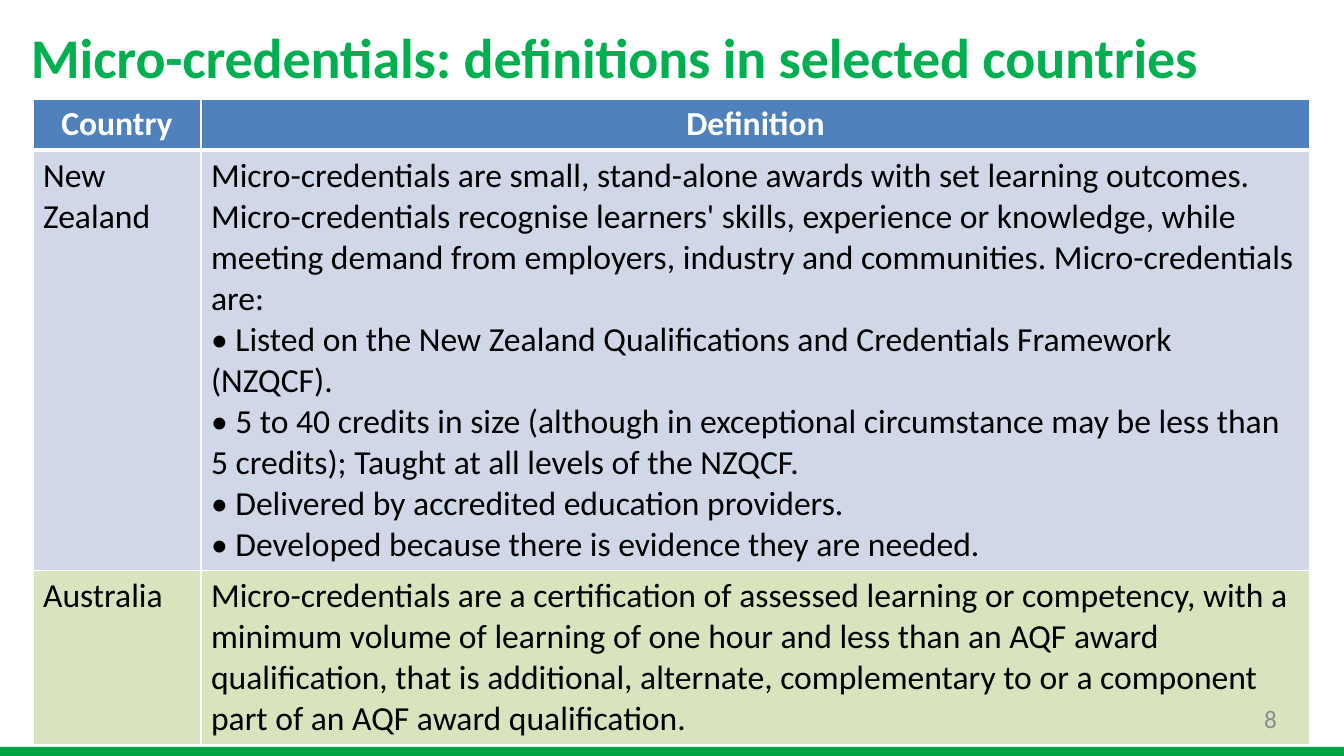
"""Build the slide on micro-credential definitions in selected countries."""
from lxml import etree
from pptx import Presentation
from pptx.dml.color import RGBColor
from pptx.enum.shapes import MSO_SHAPE
from pptx.enum.text import MSO_ANCHOR, PP_ALIGN
from pptx.oxml.ns import qn
from pptx.util import Emu, Pt

LEFT, CENTER, RIGHT = PP_ALIGN.LEFT, PP_ALIGN.CENTER, PP_ALIGN.RIGHT
RECTANGLE, TOP = MSO_SHAPE.RECTANGLE, MSO_ANCHOR.TOP

COLORS = {
    "title": "00B050", "band": "00A643", "page": "8C8C8C",
    "header": "4F81BD", "new_zealand": "D0D8E8", "australia": "D7E4BD",
    "white": "FFFFFF", "black": "000000",
}
TITLE = "Micro-credentials: definitions in selected countries"
PAGE_NUMBER = "8"
HEADINGS = ("Country", ["Definition"])
NEW_ZEALAND = ("New Zealand", [
    "Micro-credentials are small, stand-alone awards with set learning outcomes. "
    "Micro-credentials recognise learners' skills, experience or knowledge, while meeting "
    "demand from employers, industry and communities. Micro-credentials are:",
    "• Listed on the New Zealand Qualifications and Credentials Framework (NZQCF).",
    "• 5 to 40 credits in size (although in exceptional circumstance may be less than "
    "5 credits); Taught at all levels of the NZQCF.",
    "• Delivered by accredited education providers.",
    "• Developed because there is evidence they are needed.",
])
AUSTRALIA = ("Australia", [
    "Micro-credentials are a certification of assessed learning or competency, with a minimum "
    "volume of learning of one hour and less than an AQF award qualification, that is "
    "additional, alternate, complementary to or a component part of an AQF award qualification.",
])
ROWS = [
    (HEADINGS, 51, "header", {"size": 24, "color": "white", "bold": True, "align": CENTER}),
    (NEW_ZEALAND, 412, "new_zealand", {"size": 24, "color": "black"}),
    (AUSTRALIA, 172, "australia", {"size": 24, "color": "black"}),
]
COLUMN_WIDTHS = (168, 1109)
TABLE_LEFT, TABLE_TOP = 33, 99
TITLE_BOX = (22, 17, 1299, 71)
PAGE_BOX = (968, 703, 309, 38)
SLIDE_WIDTH, SLIDE_HEIGHT = 1344, 756
BAND_HEIGHT = 9
BAND_BOX = (0, SLIDE_HEIGHT - BAND_HEIGHT, SLIDE_WIDTH, BAND_HEIGHT)
THIN, THICK = 1, 3


def px(length):
    return Emu(round(length * 914400 / 100.8))


def rgb(name):
    return RGBColor.from_string(COLORS[name])


def write(frame, paragraphs, size, color, bold=False, align=LEFT):
    frame.word_wrap = True
    for index, text in enumerate(paragraphs):
        paragraph = frame.paragraphs[0] if index == 0 else frame.add_paragraph()
        paragraph.alignment = align
        run = paragraph.add_run()
        run.text = text
        for key, value in {"name": "Calibri", "size": Pt(size), "bold": bold}.items():
            setattr(run.font, key, value)
        run.font.color.rgb = rgb(color)


def clear_margins(frame):
    for side in ("left", "top", "right", "bottom"):
        setattr(frame, f"margin_{side}", 0)


def add_rectangle(slide, box, fill):
    rectangle = slide.shapes.add_shape(RECTANGLE, *map(px, box))
    rectangle.shadow.inherit = False
    rectangle.fill.solid()
    rectangle.fill.fore_color.rgb = rgb(fill)
    rectangle.line.fill.background()
    return rectangle


def add_title(slide):
    panel = add_rectangle(slide, TITLE_BOX, "white")
    panel.line.color.rgb = rgb("white")
    panel.line.width = Pt(0.5)
    frame = panel.text_frame
    clear_margins(frame)
    frame.margin_left = px(9)
    frame.vertical_anchor = TOP
    write(frame, [TITLE], size=40, color="title", bold=True)
    frame.paragraphs[0].line_spacing = Pt(51.6)
    frame.paragraphs[0].runs[0].font._element.set("spc", "-10")


def set_borders(cell, bottom):
    properties = cell._tc.get_or_add_tcPr()
    widths = {"lnL": THIN, "lnR": THIN, "lnT": THIN, "lnB": bottom}
    for index, (edge, width) in enumerate(widths.items()):
        line = etree.Element(qn(f"a:{edge}"), w=str(Pt(width)))
        fill = etree.SubElement(line, qn("a:solidFill"))
        etree.SubElement(fill, qn("a:srgbClr"), val=COLORS["white"])
        properties.insert(index, line)


def add_definitions(slide):
    size = sum(COLUMN_WIDTHS), sum(row[1] for row in ROWS)
    table = slide.shapes.add_table(
        len(ROWS), len(COLUMN_WIDTHS), *map(px, (TABLE_LEFT, TABLE_TOP, *size))).table
    for column, width in zip(table.columns, COLUMN_WIDTHS):
        column.width = px(width)
    for index, ((country, definition), height, fill, style) in enumerate(ROWS):
        table.rows[index].height = px(height)
        for cell, paragraphs in zip(table.rows[index].cells, ([country], definition)):
            cell.fill.solid()
            cell.fill.fore_color.rgb = rgb(fill)
            set_borders(cell, THICK if index == 0 else THIN)
            write(cell.text_frame, paragraphs, **style)


def add_page_number(slide):
    frame = slide.shapes.add_textbox(*map(px, PAGE_BOX)).text_frame
    clear_margins(frame)
    write(frame, [PAGE_NUMBER], size=18, color="page", align=RIGHT)


def main():
    deck = Presentation()
    deck.slide_width, deck.slide_height = px(SLIDE_WIDTH), px(SLIDE_HEIGHT)
    slide = deck.slides.add_slide(deck.slide_layouts[6])
    add_rectangle(slide, BAND_BOX, "band")
    add_title(slide)
    add_definitions(slide)
    add_page_number(slide)
    deck.save("out.pptx")


if __name__ == "__main__":
    main()
